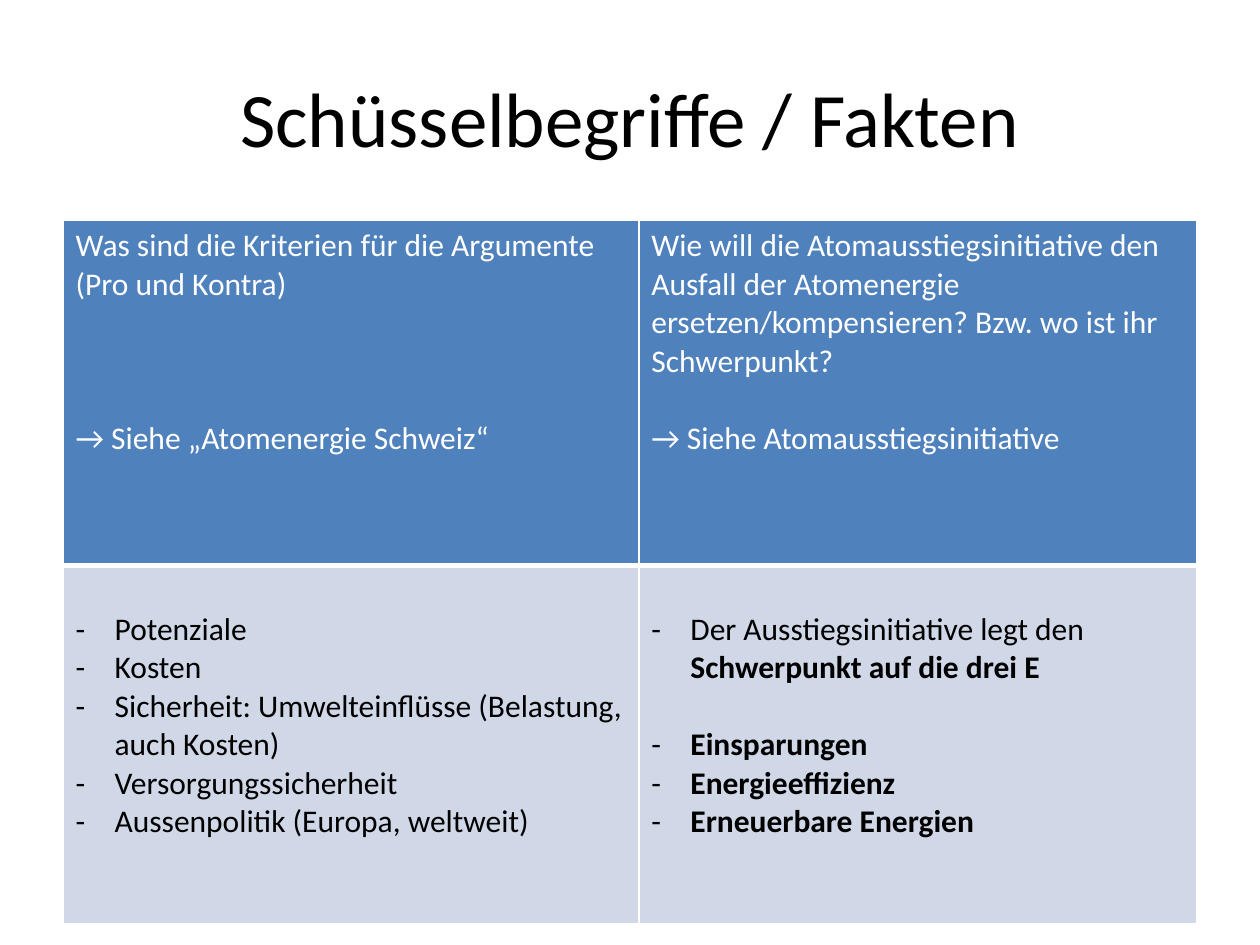
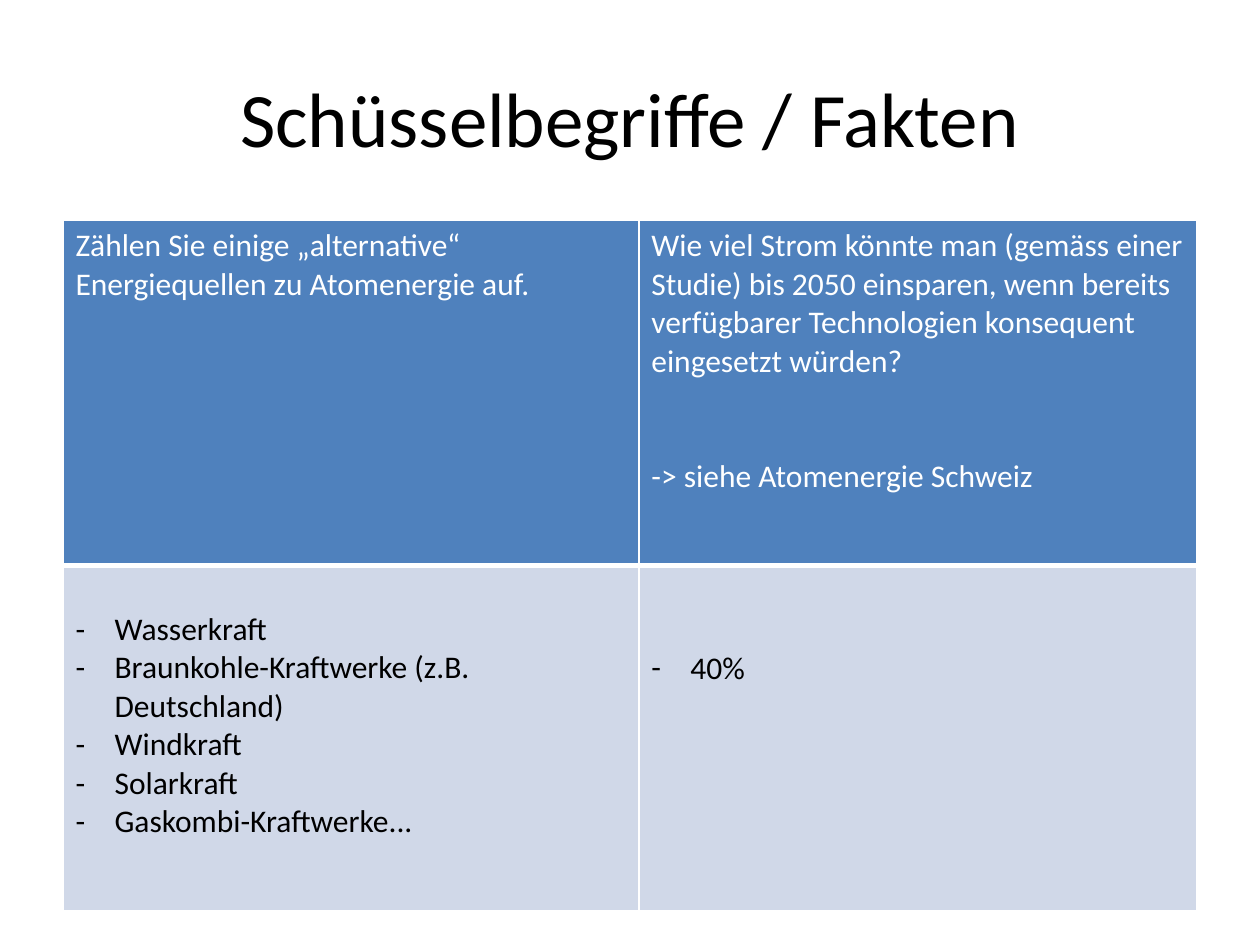
from dataclasses import dataclass

from lxml.etree import SubElement
from pptx import Presentation
from pptx.dml.color import RGBColor
from pptx.enum.text import MSO_ANCHOR, PP_ALIGN
from pptx.oxml.ns import qn
from pptx.util import Inches, Pt

FONT = "Calibri"
BLACK, WHITE = "000000", "FFFFFF"
QUESTION_FILL, ANSWER_FILL = "4F81BD", "D0D8E8"
TITLE = "Schüsselbegriffe / Fakten"
LINE_PT = 22
HANGING = Inches(0.31)
COLUMN_WIDTHS = (4.57, 4.43)
ROW_HEIGHT = 2.74


@dataclass(frozen=True)
class Entry:
    text: str = ""
    strong: str = ""
    lines_before: int = 0


@dataclass(frozen=True)
class Topic:
    question: tuple[Entry, ...]
    answers: tuple[Entry, ...]
    top_lines: int = 1


@dataclass(frozen=True)
class FactSlide:
    topics: tuple[Topic, Topic]
    answer_height: float = ROW_HEIGHT


FACT_SLIDES = (
    FactSlide(
        (
            Topic(
                (
                    Entry("Was sind die Kriterien für die Argumente (Pro und Kontra)"),
                    Entry("→ Siehe „Atomenergie Schweiz“", lines_before=3),
                ),
                (
                    Entry("Potenziale"),
                    Entry("Kosten"),
                    Entry("Sicherheit: Umwelteinflüsse (Belastung, auch Kosten)"),
                    Entry("Versorgungssicherheit"),
                    Entry("Aussenpolitik (Europa, weltweit)"),
                ),
            ),
            Topic(
                (
                    Entry("Wie will die Atomausstiegsinitiative den Ausfall der Atomenergie "
                          "ersetzen/kompensieren? Bzw. wo ist ihr Schwerpunkt?"),
                    Entry("→ Siehe Atomausstiegsinitiative", lines_before=1),
                ),
                (
                    Entry("Der Ausstiegsinitiative legt den ", "Schwerpunkt auf die drei E"),
                    Entry(strong="Einsparungen", lines_before=1),
                    Entry(strong="Energieeffizienz"),
                    Entry(strong="Erneuerbare Energien"),
                ),
            ),
        ),
        answer_height=2.84,
    ),
    FactSlide(
        (
            Topic(
                (Entry("Zählen Sie einige „alternative“ Energiequellen zu Atomenergie auf."),),
                (
                    Entry("Wasserkraft"),
                    Entry("Braunkohle-Kraftwerke (z.B. Deutschland)"),
                    Entry("Windkraft"),
                    Entry("Solarkraft"),
                    Entry("Gaskombi-Kraftwerke..."),
                ),
            ),
            Topic(
                (
                    Entry("Wie viel Strom könnte man (gemäss einer Studie) bis 2050 einsparen, "
                          "wenn bereits verfügbarer Technologien konsequent eingesetzt würden?"),
                    Entry("-> siehe Atomenergie Schweiz", lines_before=2),
                ),
                (Entry("40%"),),
                top_lines=2,
            ),
        ),
    ),
)


def apply(target, values: dict) -> None:
    for name, value in values.items():
        setattr(target, name, value)


def paint(color_format, color: str) -> None:
    color_format.rgb = RGBColor.from_string(color)


def add_run(paragraph, text: str, color: str, size: int, bold: bool = False) -> None:
    run = paragraph.add_run()
    run.text = text
    apply(run.font, {"name": FONT, "size": Pt(size), "bold": bold})
    paint(run.font.color, color)


def add_dash(paragraph) -> None:
    properties = paragraph._p.get_or_add_pPr()
    properties.set("marL", str(HANGING))
    properties.set("indent", str(-HANGING))
    SubElement(properties, qn("a:buFont"), typeface=FONT)
    SubElement(properties, qn("a:buChar"), char="-")


def add_borders(cell, widths: dict[str, int]) -> None:
    properties = cell._tc.get_or_add_tcPr()
    for side, width in widths.items():
        line = SubElement(properties, qn(f"a:ln{side}"), w=str(Pt(width)))
        fill = SubElement(line, qn("a:solidFill"))
        SubElement(fill, qn("a:srgbClr"), val=WHITE)


def fill_cell(cell, entries: tuple[Entry, ...], fill: str, color: str,
              borders: dict[str, int], top_lines: int = 0, dashed: bool = False) -> None:
    add_borders(cell, borders)
    cell.fill.solid()
    paint(cell.fill.fore_color, fill)
    apply(cell, {
        "margin_left": Inches(0.1),
        "margin_right": Inches(0.1),
        "margin_top": Inches(0.05) + Pt(LINE_PT * top_lines),
        "margin_bottom": Inches(0.05),
        "vertical_anchor": MSO_ANCHOR.TOP,
    })
    frame = cell.text_frame
    for index, entry in enumerate(entries):
        paragraph = frame.add_paragraph() if index else frame.paragraphs[0]
        if entry.lines_before:
            paragraph.space_before = Pt(LINE_PT * entry.lines_before)
        if dashed:
            add_dash(paragraph)
        if entry.text:
            add_run(paragraph, entry.text, color, 18)
        if entry.strong:
            add_run(paragraph, entry.strong, color, 18, bold=True)


def add_title(slide) -> None:
    title = slide.shapes.title
    apply(title, {"left": Inches(0.5), "top": Inches(0.3),
                  "width": Inches(9), "height": Inches(1.25)})
    title.text_frame.vertical_anchor = MSO_ANCHOR.MIDDLE
    paragraph = title.text_frame.paragraphs[0]
    paragraph.alignment = PP_ALIGN.CENTER
    add_run(paragraph, TITLE, BLACK, 44)


def add_topics(slide, facts: FactSlide) -> None:
    heights = (ROW_HEIGHT, facts.answer_height)
    table = slide.shapes.add_table(2, 2, Inches(0.5), Inches(1.75),
                                   Inches(9), Inches(sum(heights))).table
    apply(table, {"first_row": False, "horz_banding": False})
    for column, width in zip(table.columns, COLUMN_WIDTHS):
        column.width = Inches(width)
    for row, height in zip(table.rows, heights):
        row.height = Inches(height)
    for index, topic in enumerate(facts.topics):
        fill_cell(table.cell(0, index), topic.question, QUESTION_FILL, WHITE,
                  {"L": 1, "R": 1, "T": 1, "B": 3})
        fill_cell(table.cell(1, index), topic.answers, ANSWER_FILL, BLACK,
                  {"L": 1, "R": 1, "T": 3, "B": 1}, topic.top_lines, dashed=True)


def main() -> None:
    deck = Presentation()
    apply(deck, {"slide_width": Inches(10), "slide_height": Inches(7.5)})
    for facts in FACT_SLIDES:
        slide = deck.slides.add_slide(deck.slide_layouts[5])
        add_title(slide)
        add_topics(slide, facts)
    deck.save("out.pptx")


if __name__ == "__main__":
    main()
